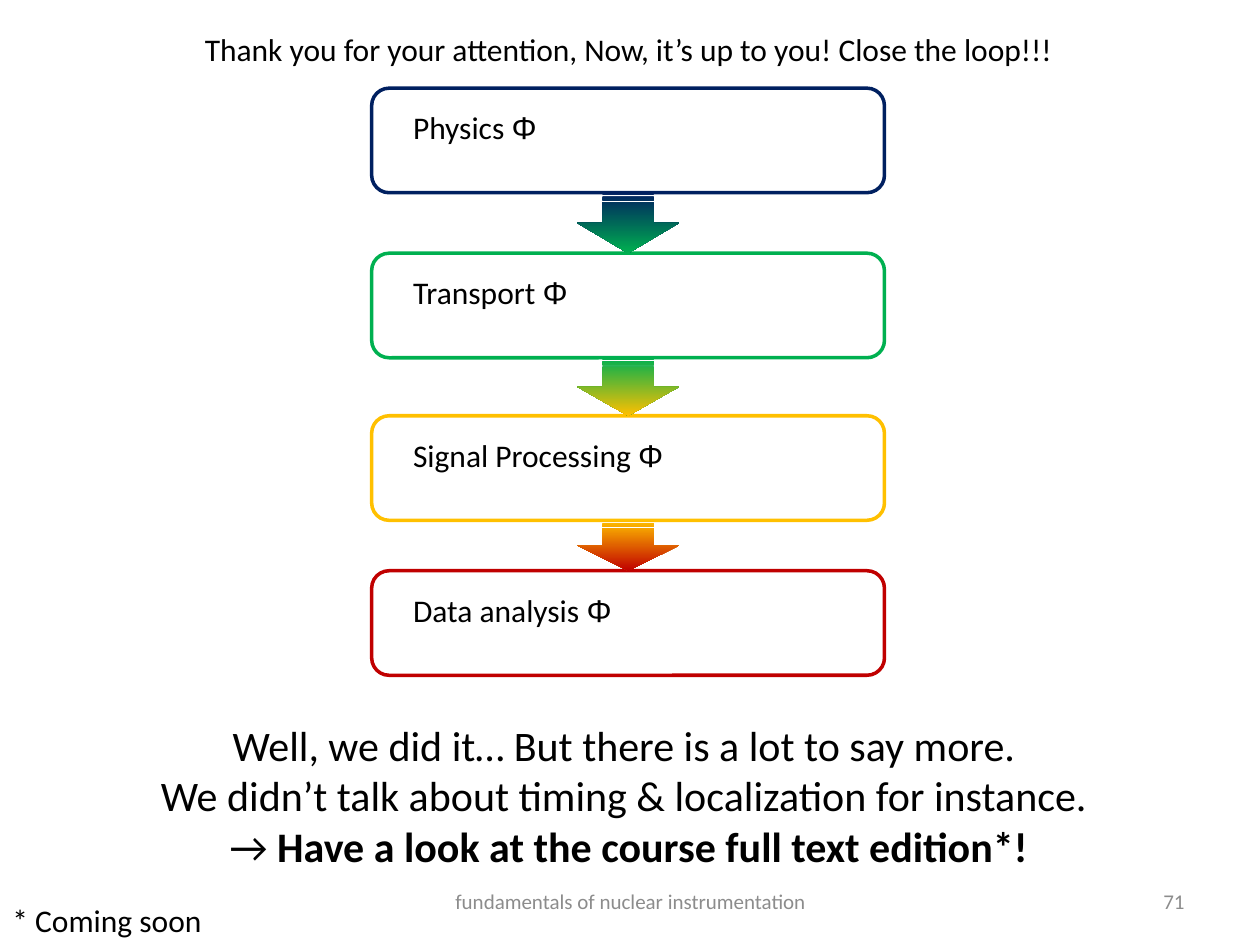
from pptx import Presentation, util as u
from pptx.dml.color import RGBColor
from pptx.enum import shapes, text

LEFT, CENTER, RIGHT = text.PP_ALIGN.LEFT, text.PP_ALIGN.CENTER, text.PP_ALIGN.RIGHT
BOX_LEFT, BOX_WIDTH, BOX_HEIGHT = 29.5, 40.7, 8.3
ARROW_BREADTH = 8.1
STAGES = [
    ("Physics ", 7, 12, "002060"),
    ("Transport ", 20.1, 21.1, "00B050"),
    ("Signal Processing ", 33, 33.6, "FFC000"),
    ("Data analysis ", 45.3, 26.2, "C00000"),
]


def rgb(value):
    return RGBColor.from_string(value)


def add_run(p, content, font="Calibri", size=18, color="000000", bold=False):
    r = p.add_run()
    r.text = content
    r.font.name, r.font.size, r.font.bold = font, u.Pt(size), bold
    r.font.color.rgb = rgb(color)


class Deck:
    """Draws on one slide with a grid of 100 columns and 75 rows."""

    def __init__(self):
        self.prs = Presentation()
        self.prs.slide_width, self.prs.slide_height = u.Inches(10), u.Inches(7.5)
        self.s = self.prs.slides.add_slide(self.prs.slide_layouts[6])

    def place(self, col, row, cols, rows):
        unit_x, unit_y = self.prs.slide_width / 100, self.prs.slide_height / 75
        return [round(n) for n in (col * unit_x, row * unit_y, cols * unit_x, rows * unit_y)]

    def label(self, area, paragraphs, align=LEFT, wrap=False, middle=False, **style):
        tf = self.s.shapes.add_textbox(*self.place(*area)).text_frame
        tf.word_wrap = wrap
        tf.vertical_anchor = text.MSO_ANCHOR.MIDDLE if middle else text.MSO_ANCHOR.TOP
        for i, runs in enumerate(paragraphs):
            p = tf.add_paragraph() if i else tf.paragraphs[0]
            p.alignment = align
            for content, extra in runs:
                add_run(p, content, **{**style, **extra})

    def box(self, area, color):
        sp = self.s.shapes.add_shape(shapes.MSO_SHAPE.ROUNDED_RECTANGLE, *self.place(*area))
        sp.shadow.inherit = False
        sp.fill.background()
        sp.line.color.rgb = rgb(color)
        sp.line.width = u.Pt(2)

    def down_arrow(self, center, middle, length, breadth, colors):
        area = self.place(center - length / 2, middle - breadth / 2, length, breadth)
        sp = self.s.shapes.add_shape(shapes.MSO_SHAPE.STRIPED_RIGHT_ARROW, *area)
        sp.rotation = 90
        sp.shadow.inherit = False
        sp.line.fill.background()
        sp.fill.gradient()
        sp.fill.gradient_angle = 0
        for stop, color in zip(sp.fill.gradient_stops, colors):
            stop.color.rgb = rgb(color)


def main():
    deck = Deck()
    deck.label((14.8, 1.9, 70.2, 4),
               [[("Thank you for your attention, Now, it’s up to you! Close the loop!!!", {})]],
               align=CENTER)

    for name, top, width, color in STAGES:
        deck.box((BOX_LEFT, top, BOX_WIDTH, BOX_HEIGHT), color)
        deck.label((31.8, top + 1.1, width, 4), [[(name, {}), ("Φ", {"font": "Arial"})]])

    for (_, top, _, start), (_, below, _, end) in zip(STAGES, STAGES[1:]):
        bottom = top + BOX_HEIGHT
        deck.down_arrow(BOX_LEFT + BOX_WIDTH / 2, (bottom + below) / 2,
                        below - bottom, ARROW_BREADTH, (start, end))

    deck.label((5.4, 56.6, 89, 13.1), [
        [("Well, we did it… But there is a lot to say more. ", {})],
        [("We didn’t talk about timing & localization for instance. ", {})],
        [("→ ", {}), ("Have a look at the course full text edition*!", {"bold": True})],
    ], align=CENTER, wrap=True, size=24)

    footer = {"wrap": True, "middle": True, "size": 12, "color": "8C8C8C"}
    deck.label((34.2, 69.5, 31.7, 4), [[("fundamentals of nuclear instrumentation", {})]],
               align=CENTER, **footer)
    deck.label((71.7, 69.5, 23.3, 4), [[("71", {})]], align=RIGHT, **footer)
    deck.label((0, 71, 17.2, 4), [[("* Coming soon", {})]])
    deck.prs.save("out.pptx")


if __name__ == "__main__":
    main()
